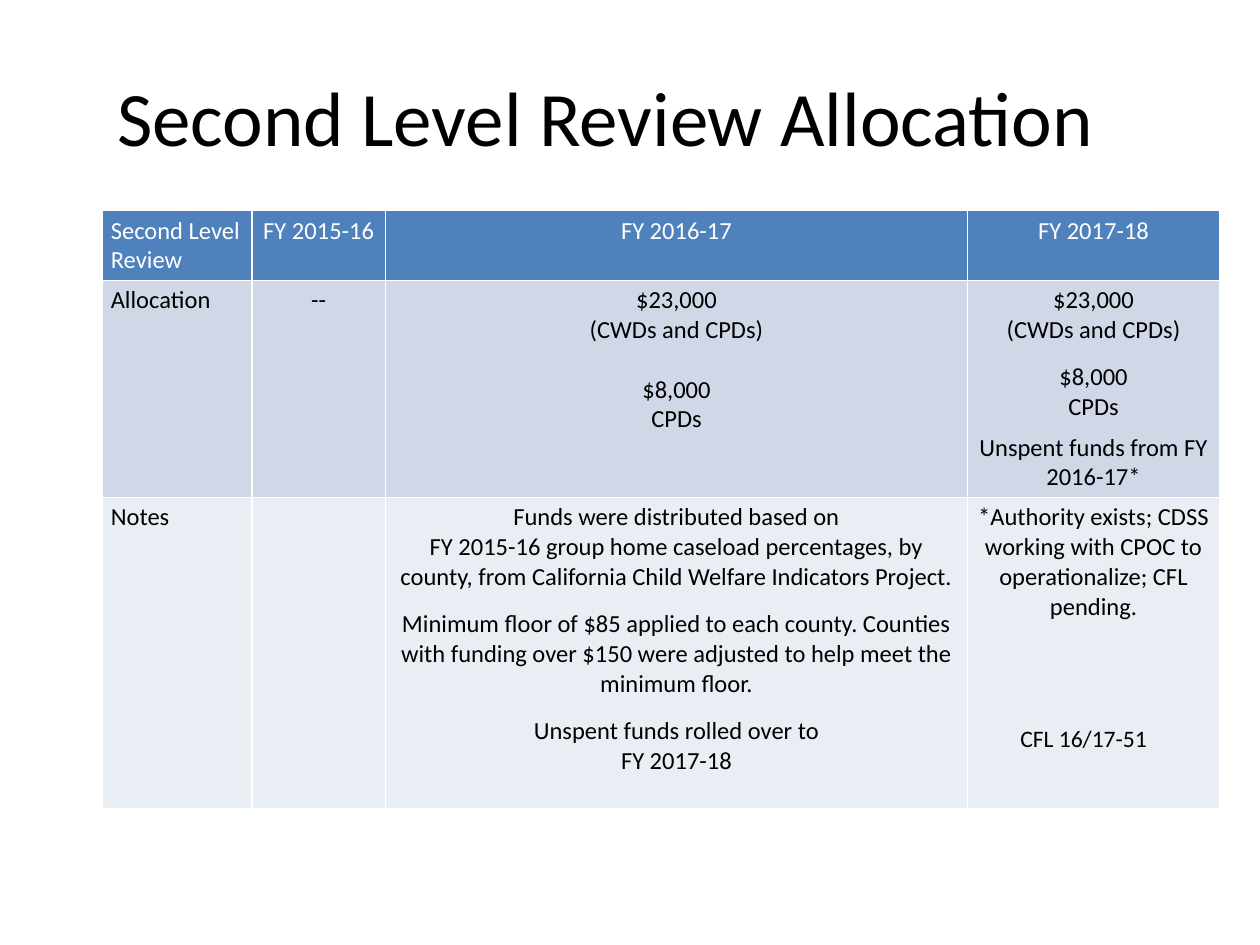
from lxml.etree import SubElement
from pptx import Presentation
from pptx.dml.color import RGBColor
from pptx.enum.text import MSO_ANCHOR, PP_ALIGN
from pptx.oxml.ns import qn
from pptx.util import Inches, Pt

prs = Presentation()
prs.slide_width, prs.slide_height = Inches(10), Inches(7.5)
W, H = prs.slide_width, prs.slide_height
s = prs.slides.add_slide(prs.slide_layouts[5])


def add_run(p, text, size, color):
    r = p.add_run()
    r.text = text
    r.font.name = "Calibri"
    r.font.size = Pt(size)
    r.font.bold = False
    r.font.color.rgb = RGBColor.from_string(color)


def add_borders(cell, color, width):
    tcPr = cell._tc.get_or_add_tcPr()
    for i, side in enumerate(("lnL", "lnR", "lnT", "lnB")):
        ln = tcPr.makeelement(qn(f"a:{side}"), {"w": str(Pt(width))})
        fill = SubElement(ln, qn("a:solidFill"))
        SubElement(fill, qn("a:srgbClr"), val=color)
        tcPr.insert(i, ln)


# Title
title = s.shapes.title
title.left, title.top = int(W * 0.083), int(H * 0.04)
title.width, title.height = int(W * 0.88), int(H * 0.165)
tf = title.text_frame
tf.vertical_anchor = MSO_ANCHOR.MIDDLE
p = tf.paragraphs[0]
p.alignment = PP_ALIGN.LEFT
add_run(p, "Second Level Review Allocation", 44, "000000")

# Table content: each cell lists (text, space before in points)
rows = [
    [[("Second Level Review", 0)], [("FY 2015-16", 0)],
     [("FY 2016-17", 0)], [("FY 2017-18", 0)]],
    [[("Allocation", 0)], [("--", 0)],
     [("$23,000", 0), ("(CWDs and CPDs)", 0), ("$8,000", 17), ("CPDs", 0)],
     [("$23,000", 0), ("(CWDs and CPDs)", 0), ("$8,000", 10), ("CPDs", 0),
      ("Unspent funds from FY 2016-17*", 6)]],
    [[("Notes", 0)], [],
     [("Funds were distributed based on", 0),
      ("FY 2015-16 group home caseload percentages, by county, "
       "from California Child Welfare Indicators Project.", 0),
      ("Minimum floor of $85 applied to each county. Counties with funding "
       "over $150 were adjusted to help meet the minimum floor.", 10),
      ("Unspent funds rolled over to", 10), ("FY 2017-18", 0)],
     [("*Authority exists; CDSS working with CPOC to operationalize; "
       "CFL pending.", 0)]],
]
col_widths = [1.19, 1.06, 4.62, 2]
row_heights = [0.54, 1.72, 2.47]
row_fills = ["4F81BD", "D0D8E8", "E9EDF4"]
row_colors = ["FFFFFF", "000000", "000000"]

# Table
table = s.shapes.add_table(
    len(rows), len(col_widths), int(W * 0.081), int(H * 0.223),
    Inches(sum(col_widths)), Inches(sum(row_heights))).table
for col, width in zip(table.columns, col_widths):
    col.width = Inches(width)
for i, row in enumerate(rows):
    table.rows[i].height = Inches(row_heights[i])
    for j, lines in enumerate(row):
        cell = table.cell(i, j)
        cell.margin_left = cell.margin_right = Inches(0.07)
        cell.margin_top = cell.margin_bottom = Inches(0.04)
        cell.fill.solid()
        cell.fill.fore_color.rgb = RGBColor.from_string(row_fills[i])
        add_borders(cell, "FFFFFF", 1)
        tf = cell.text_frame
        for k, (text, gap) in enumerate(lines):
            p = tf.add_paragraph() if k else tf.paragraphs[0]
            p.alignment = PP_ALIGN.CENTER if j else PP_ALIGN.LEFT
            if gap:
                p.space_before = Pt(gap)
            add_run(p, text, 14, row_colors[i])

# Letter reference over the last cell
sp = s.shapes.add_textbox(int(W * 0.8), int(H * 0.759), int(W * 0.131), int(H * 0.044))
tf = sp.text_frame
tf.word_wrap = True
add_run(tf.paragraphs[0], "CFL 16/17-51", 13.5, "000000")

prs.save("out.pptx")
